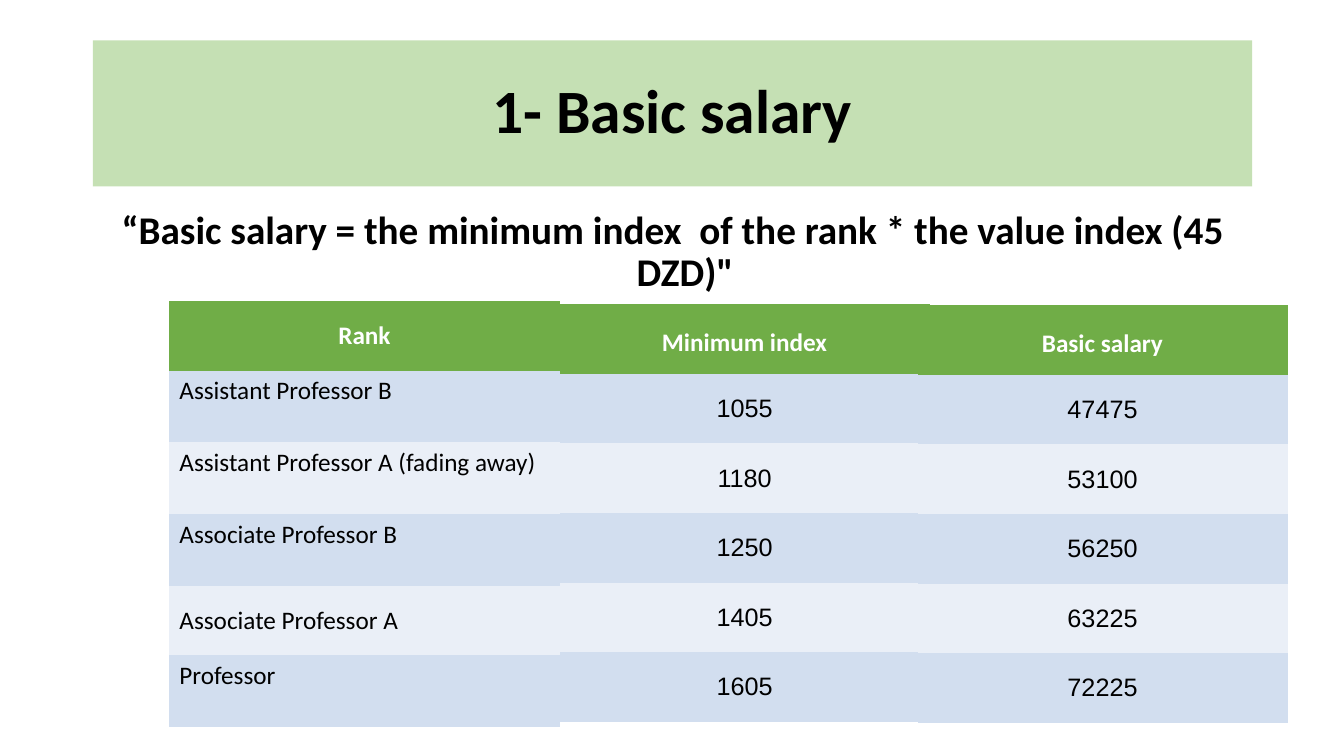
"""Build the slide on basic salary by rank."""
import dataclasses
import typing

import lxml.etree
import pptx
import pptx.dml.color
import pptx.enum.text
import pptx.oxml.ns
import pptx.util

Inches = pptx.util.Inches
Pt = pptx.util.Pt
ALIGN = pptx.enum.text.PP_ALIGN
ANCHOR = pptx.enum.text.MSO_ANCHOR
qn = pptx.oxml.ns.qn

COLORS = {
    "title": "C5E0B4",
    "head": "70AD47",
    "dark": "D2DEEF",
    "light": "EAEFF7",
    "ink": "000000",
    "white": "FFFFFF",
}
PLAIN = "{2D5ABB26-0587-4C30-8999-92F81FD0307C}"
INDEX = 45
RANKS = {
    "Assistant Professor B": 1055,
    "Assistant Professor A (fading away)": 1180,
    "Associate Professor B": 1250,
    "Associate Professor A": 1405,
    "Professor": 1605,
}
MIDDLE = "Associate Professor A"
ROW = 0.69
TALL = 0.71


@dataclasses.dataclass
class Column:
    left: float
    top: float
    width: float
    head: str
    cells: list[str]
    names: bool = False


def color(name: str) -> pptx.dml.color.RGBColor:
    return pptx.dml.color.RGBColor.from_string(COLORS[name])


def apply(target: typing.Any, values: dict[str, typing.Any]) -> None:
    for key, value in values.items():
        setattr(target, key, value)


def paint(target: typing.Any, name: str) -> None:
    target.fill.solid()
    target.fill.fore_color.rgb = color(name)


def write(frame: typing.Any, text: str, size: int, bold: bool, ink: str,
          layout: dict[str, typing.Any], rtl: bool = False) -> None:
    line = frame.paragraphs[0]
    run = line.add_run()
    run.text = text
    apply(line, layout)
    apply(run.font, {"name": "Calibri", "size": Pt(size), "bold": bold})
    run.font.color.rgb = color(ink)
    if rtl:
        line._p.get_or_add_pPr().set("rtl", "1")
        props = run._r.get_or_add_rPr()
        lxml.etree.SubElement(props, qn("a:cs")).set("typeface", "Arial")


def place(shape: typing.Any, left: float, top: float, width: float,
          height: float) -> None:
    apply(shape, {"left": Inches(left), "top": Inches(top),
                  "width": Inches(width), "height": Inches(height)})
    apply(shape.text_frame, {"word_wrap": True,
                             "vertical_anchor": ANCHOR.MIDDLE,
                             "auto_size": pptx.enum.text.MSO_AUTO_SIZE.NONE})


def draw(slide: typing.Any, column: Column) -> None:
    sizes = [ROW] + [TALL if column.names and text != MIDDLE else ROW
                     for text in column.cells]
    frame = slide.shapes.add_table(
        len(sizes), 1, Inches(column.left), Inches(column.top),
        Inches(column.width), Inches(sum(sizes)))
    for style in frame._element.iter(qn("a:tableStyleId")):
        style.text = PLAIN
    grid = frame.table
    for row, size in zip(grid.rows, sizes):
        row.height = Inches(size)

    head = grid.cell(0, 0)
    head.vertical_anchor = ANCHOR.MIDDLE
    paint(head, "head")
    layout = {"alignment": ALIGN.CENTER}
    if not column.names:
        layout["line_spacing"] = Pt(27)
    write(head.text_frame, column.head, 18, True, "white", layout,
          rtl=column.names)

    for place_no, text in enumerate(column.cells, 1):
        cell = grid.cell(place_no, 0)
        high = column.names and text != MIDDLE
        cell.vertical_anchor = ANCHOR.TOP if high else ANCHOR.MIDDLE
        paint(cell, "dark" if place_no % 2 else "light")
        side = ALIGN.LEFT if column.names else ALIGN.CENTER
        write(cell.text_frame, text, 18, False, "ink", {"alignment": side},
              rtl=not column.names)


def main() -> None:
    deck = pptx.Presentation()
    apply(deck, {"slide_width": Inches(13.33), "slide_height": Inches(7.5)})
    slide = deck.slides.add_slide(deck.slide_layouts[1])
    layout = {"alignment": ALIGN.CENTER, "line_spacing": 0.9,
              "space_before": Pt(0)}

    title = slide.shapes.title
    place(title, 0.92, 0.4, 11.5, 1.45)
    paint(title, "title")
    write(title.text_frame, "1- Basic salary", 44, True, "ink", layout)

    body = slide.placeholders[1]
    place(body, 0.92, 1.85, 11.5, 1.32)
    props = body.text_frame.paragraphs[0]._p.get_or_add_pPr()
    apply_indent = {"marL": Inches(0.25), "indent": Inches(-0.25)}
    for key, value in apply_indent.items():
        props.set(key, str(value))
    lxml.etree.SubElement(props, qn("a:buNone"))
    write(body.text_frame,
          "“Basic salary = the minimum index  of the rank * "
          f"the value index ({INDEX} DZD)\"", 28, True, "ink", layout)

    columns = [
        Column(1.68, 2.99, 3.87, "Rank", list(RANKS), names=True),
        Column(5.55, 3.02, 3.67, "Minimum index",
               [str(rank) for rank in RANKS.values()]),
        Column(9.1, 3.03, 3.67, "Basic salary",
               [str(rank * INDEX) for rank in RANKS.values()]),
    ]
    for column in columns:
        draw(slide, column)
    deck.save("out.pptx")


if __name__ == "__main__":
    main()
